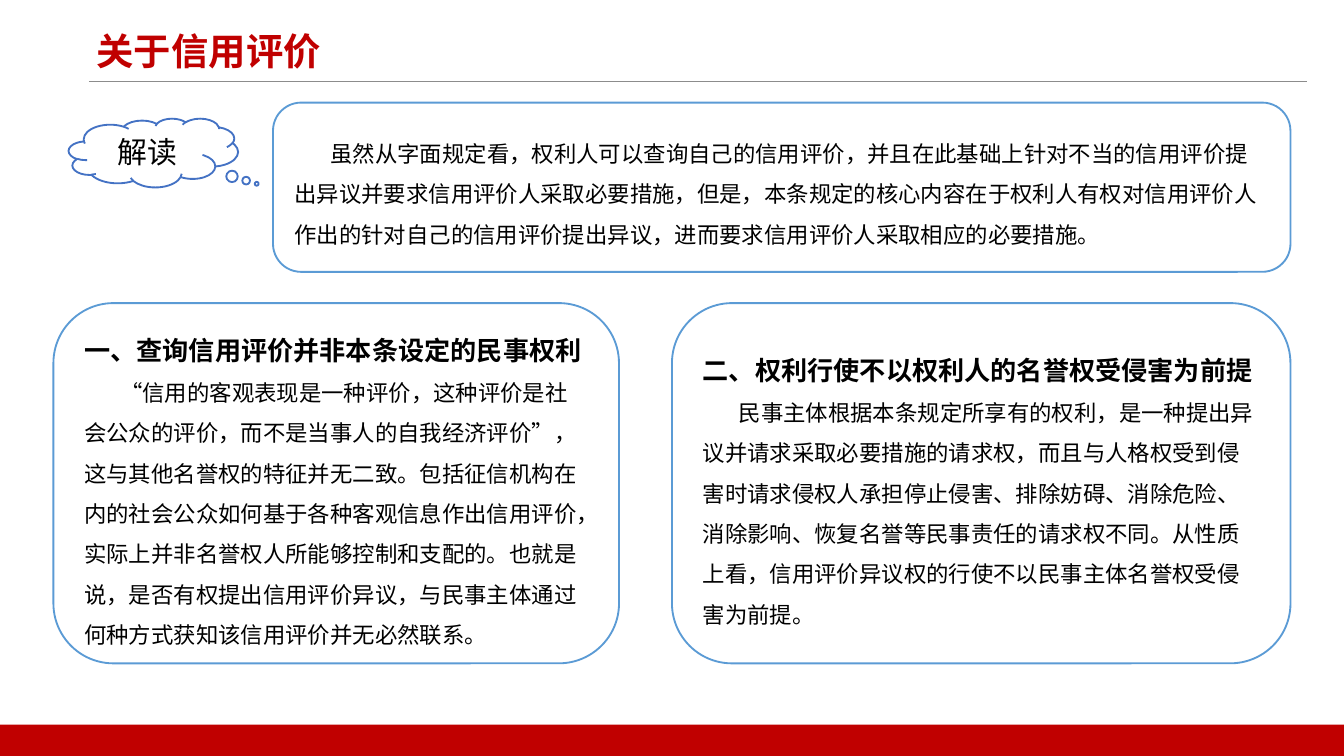
from lxml import etree
from pptx import Presentation
from pptx.dml.color import RGBColor
from pptx.enum import shapes, text
from pptx.oxml import ns
from pptx.util import Cm, Pt

RED = RGBColor(0xC0, 0x00, 0x00)
BLACK = RGBColor(0x00, 0x00, 0x00)
WHITE = RGBColor(0xFF, 0xFF, 0xFF)
GRAY = RGBColor(0x8C, 0x8C, 0x8C)
SKY = RGBColor(0x5B, 0x9B, 0xD5)
BLUE = RGBColor(0x44, 0x72, 0xC4)
FACE = "Noto Sans CJK SC"
SHAPE = shapes.MSO_SHAPE
ALIGN = text.PP_ALIGN
ANCHOR = text.MSO_ANCHOR

INTRO = "虽然从字面规定看，权利人可以查询自己的信用评价，并且在此基础上针对不当的信用评价提出异议并要求信用评价人采取必要措施，但是，本条规定的核心内容在于权利人有权对信用评价人作出的针对自己的信用评价提出异议，进而要求信用评价人采取相应的必要措施。"
FIRST = (
    "一、查询信用评价并非本条设定的民事权利",
    "“信用的客观表现是一种评价，这种评价是社会公众的评价，而不是当事人的自我经济评价”，这与其他名誉权的特征并无二致。包括征信机构在内的社会公众如何基于各种客观信息作出信用评价，实际上并非名誉权人所能够控制和支配的。也就是说，是否有权提出信用评价异议，与民事主体通过何种方式获知该信用评价并无必然联系。",
)
SECOND = (
    "二、权利行使不以权利人的名誉权受侵害为前提",
    "民事主体根据本条规定所享有的权利，是一种提出异议并请求采取必要措施的请求权，而且与人格权受到侵害时请求侵权人承担停止侵害、排除妨碍、消除危险、消除影响、恢复名誉等民事责任的请求权不同。从性质上看，信用评价异议权的行使不以民事主体名誉权受侵害为前提。",
)


def style(para, size, color=BLACK, bold=False, align=ALIGN.LEFT, space=1.0):
    """Set the font, alignment and line spacing of a paragraph."""
    para.alignment = align
    para.line_spacing = space
    font = para.font
    font.size = Pt(size)
    font.bold = bold
    font.color.rgb = color
    font.name = FACE
    etree.SubElement(font._element, ns.qn("a:ea"), typeface=FACE)


def indent(para, size):
    """Indent the first line of a paragraph."""
    props = para._p.get_or_add_pPr()
    props.set("marL", "0")
    props.set("indent", str(size))


def shape(slide, kind, box, fill=None, line=None):
    """Add a flat shape with an optional fill and outline."""
    item = slide.shapes.add_shape(kind, *map(Cm, box))
    item.shadow.inherit = False
    if fill is None:
        item.fill.background()
    else:
        item.fill.solid()
        item.fill.fore_color.rgb = fill
    if line is None:
        item.line.fill.background()
    else:
        item.line.color.rgb = line
        item.line.width = Pt(1)
    item.text_frame.word_wrap = True
    item.text_frame.vertical_anchor = ANCHOR.MIDDLE
    return item


def card(slide, box, body, head=None):
    """Add a rounded card with an indented body and an optional heading."""
    frame = shape(slide, SHAPE.ROUNDED_RECTANGLE, box, line=SKY).text_frame
    para = frame.paragraphs[0]
    if head:
        para.text = head
        style(para, 14, bold=True, space=1.5)
        para = frame.add_paragraph()
    para.text = body
    indent(para, Cm(0.68))
    style(para, 12, space=1.5)


def title(slide, words):
    """Place the red slide title."""
    item = slide.shapes.title
    item.left, item.top, item.width, item.height = map(Cm, (1.57, 0.51, 4.85, 1.3))
    frame = item.text_frame
    frame.text = words
    frame.word_wrap = False
    frame.auto_size = text.MSO_AUTO_SIZE.NONE
    frame.vertical_anchor = ANCHOR.TOP
    style(frame.paragraphs[0], 20, RED, True, space=0.9)


def rule(slide, left, right, top):
    """Draw the thin line below the title."""
    line = slide.shapes.add_connector(
        shapes.MSO_CONNECTOR.STRAIGHT, Cm(left), Cm(top), Cm(right), Cm(top))
    line.line.color.rgb = GRAY
    line.line.width = Pt(0.5)
    etree.SubElement(line._element.spPr, ns.qn("a:effectLst"))


def cloud(slide, box, words):
    """Add the cloud callout with its label."""
    item = shape(slide, SHAPE.CLOUD_CALLOUT, box, WHITE, BLUE)
    item.adjustments[0] = 0.61
    item.adjustments[1] = 0.45
    para = item.text_frame.paragraphs[0]
    para.text = words
    style(para, 16, align=ALIGN.CENTER)


def main():
    """Build and save the slide."""
    deck = Presentation()
    deck.slide_width, deck.slide_height = Cm(25.4), Cm(14.29)
    slide = deck.slides.add_slide(deck.slide_layouts[5])
    rule(slide, 1.68, 24.71, 1.54)
    shape(slide, SHAPE.RECTANGLE, (0, 13.7, 25.4, 0.59), RED)
    title(slide, "关于信用评价")
    card(slide, (5.16, 1.94, 19.23, 3.2), INTRO)
    cloud(slide, (1.3, 2.24, 3.2, 1.3), "解读")
    for left, width, (head, body) in ((1.01, 10.69, FIRST), (12.7, 11.69, SECOND)):
        card(slide, (left, 5.73, width, 6.81), body, head)
    deck.save("out.pptx")


if __name__ == "__main__":
    main()
